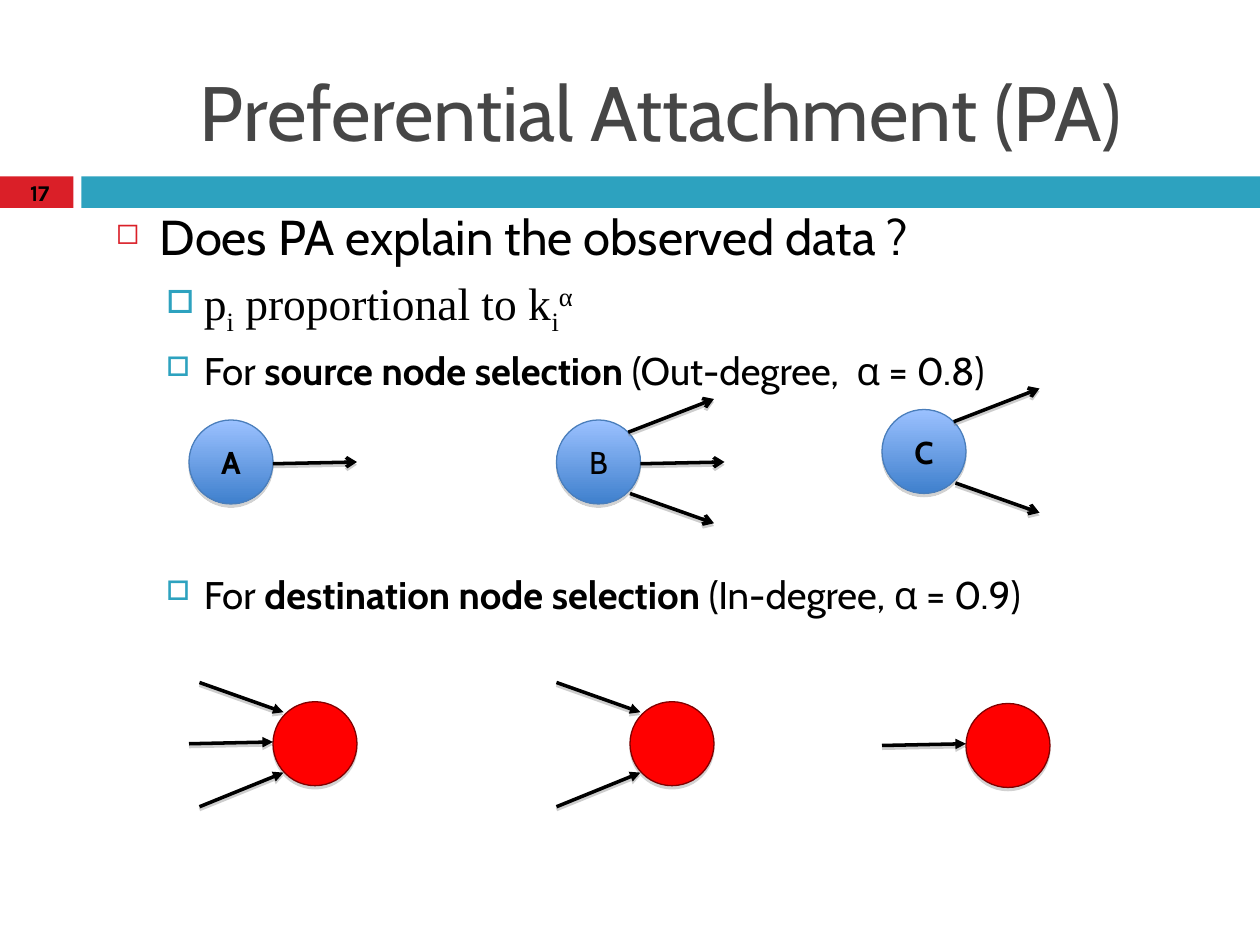
import pptx
import pptx.util
import pptx.dml.color
import pptx.enum.shapes
import pptx.enum.text
import pptx.oxml
import pptx.oxml.ns
from lxml import etree

Pt = pptx.util.Pt
RGBColor = pptx.dml.color.RGBColor
qn = pptx.oxml.ns.qn
SHAPE = pptx.enum.shapes.MSO_SHAPE
ALIGN = pptx.enum.text.PP_ALIGN
ANCHOR = pptx.enum.text.MSO_ANCHOR

BLACK = RGBColor(0x00, 0x00, 0x00)
TITLE_GRAY = RGBColor(0x46, 0x46, 0x46)
BAR_RED = RGBColor(0xDA, 0x1F, 0x28)
BAR_TEAL = RGBColor(0x2D, 0xA2, 0xBF)
SOURCE_LIGHT = RGBColor(0x9B, 0xC1, 0xFF)
SOURCE_DARK = RGBColor(0x3F, 0x80, 0xCD)
SOURCE_EDGE = RGBColor(0x4A, 0x7E, 0xBB)
DESTINATION_RED = RGBColor(0xFF, 0x00, 0x00)
DESTINATION_EDGE = RGBColor(0x80, 0x00, 0x00)
SHADOW_GRAY = RGBColor(0x80, 0x80, 0x80)

NODE_SIZE = 48
OUT_UP = ((41, 7), (90, -12))
OUT_LEVEL = ((48, 25), (96, 24))
OUT_DOWN = ((42, 42), (90, 59))
IN_ABOVE = ((-42, -11), (6, 6))
IN_LEVEL = ((-48, 24), (0, 23))
IN_BELOW = ((-42, 60), (6, 40.5))

SOURCES = [
    ("C", True, 504, 234, [OUT_UP, OUT_DOWN]),
    ("A", True, 108, 240, [OUT_LEVEL]),
    ("B", False, 318, 240, [OUT_UP, OUT_LEVEL, OUT_DOWN]),
]
DESTINATIONS = [
    (156, 401, [IN_BELOW, IN_LEVEL, IN_ABOVE]),
    (360, 401, [IN_BELOW, IN_ABOVE]),
    (552, 402, [IN_LEVEL]),
]


def add_run(paragraph, text, size=22, font="Cabin", color=BLACK, bold=False, baseline=0):
    run = paragraph.add_run()
    run.text = text
    run.font.size = Pt(size)
    run.font.name = font
    run.font.color.rgb = color
    run.font.bold = bold
    if baseline:
        run.font._element.set("baseline", str(baseline * 1000))


def set_bullet(paragraph, symbol, color, percent, left, hanging):
    properties = paragraph._p.get_or_add_pPr()
    properties.set("marL", str(Pt(left)))
    properties.set("indent", str(-Pt(hanging)))
    bullet_color = etree.SubElement(properties, qn("a:buClr"))
    etree.SubElement(bullet_color, qn("a:srgbClr"), val=str(color))
    etree.SubElement(properties, qn("a:buSzPct"), val=str(percent * 1000))
    etree.SubElement(properties, qn("a:buChar"), char=symbol)


def set_shadow(element, distance, opacity):
    effects = element.spPr.find(qn("a:effectLst"))
    if effects is None:
        effects = etree.SubElement(element.spPr, qn("a:effectLst"))
    shadow = etree.SubElement(effects, qn("a:outerShdw"), blurRad="0",
                              dist=str(Pt(distance)), dir="5400000", rotWithShape="0")
    color = etree.SubElement(shadow, qn("a:srgbClr"), val=str(SHADOW_GRAY))
    etree.SubElement(color, qn("a:alpha"), val=str(opacity * 1000))


def add_bar(slide, left, width, color):
    bar = slide.shapes.add_shape(SHAPE.RECTANGLE, Pt(left), Pt(100.8), Pt(width), Pt(18))
    bar.shadow.inherit = False
    bar.fill.solid()
    bar.fill.fore_color.rgb = color
    bar.line.fill.background()


def add_node(group, left, top, colors, edge):
    node = group.shapes.add_shape(SHAPE.OVAL, Pt(left), Pt(top), Pt(NODE_SIZE), Pt(NODE_SIZE))
    if len(colors) > 1:
        node.fill.gradient()
        node.fill.gradient_angle = 270
        for stop, position, color in zip(node.fill.gradient_stops, (0, 1), colors):
            stop.position = position
            stop.color.rgb = color
    else:
        node.fill.solid()
        node.fill.fore_color.rgb = colors[0]
    node.line.color.rgb = edge
    node.line.width = Pt(0.75)
    node.shadow.inherit = False
    set_shadow(node._element, 1.8, 35)
    return node


def add_arrows(group, left, top, routes, head):
    for (start_x, start_y), (end_x, end_y) in routes:
        arrow = group.shapes.add_connector(
            pptx.enum.shapes.MSO_CONNECTOR.STRAIGHT,
            Pt(left + start_x), Pt(top + start_y), Pt(left + end_x), Pt(top + end_y))
        arrow.line.color.rgb = BLACK
        arrow.line.width = Pt(2)
        etree.SubElement(arrow.line._get_or_add_ln(), qn("a:tailEnd"), type=head)
        set_shadow(arrow._element, 1.6, 38)


def add_title(slide):
    title = slide.shapes.title
    title.left, title.top, title.width, title.height = Pt(84), Pt(24), Pt(588), Pt(78)
    title.text_frame.vertical_anchor = ANCHOR.MIDDLE
    paragraph = title.text_frame.paragraphs[0]
    paragraph.alignment = ALIGN.CENTER
    add_run(paragraph, "Preferential Attachment (PA)", size=44, color=TITLE_GRAY)


def add_subpoint(frame, space_before=5.5):
    paragraph = frame.add_paragraph()
    paragraph.level = 1
    paragraph.space_before = Pt(space_before)
    set_bullet(paragraph, "□", BAR_TEAL, 70, 50.4, 21.6)
    return paragraph


def add_body(slide):
    body = slide.shapes.add_textbox(Pt(59), Pt(114.5), Pt(618.5), Pt(394))
    frame = body.text_frame
    frame.word_wrap = True

    question = frame.paragraphs[0]
    question.space_before = Pt(7)
    set_bullet(question, "◻", BAR_RED, 60, 25.2, 25.2)
    add_run(question, "Does PA explain the observed data ?", size=28)

    formula = add_subpoint(frame)
    for text, baseline in [("p", 0), ("i", -25), (" proportional to k", 0), ("i", -25), ("α", 30)]:
        add_run(formula, text, size=26, font="Times New Roman", baseline=baseline)

    for selection, result, space_before in [
        ("source node selection", " (Out-degree,  α = 0.8)", 5.5),
        ("destination node selection", " (In-degree, α = 0.9)", 101.5),
    ]:
        point = add_subpoint(frame, space_before)
        add_run(point, "For ")
        add_run(point, selection, bold=True)
        add_run(point, result)


def add_source(slide, label, bold, left, top, routes):
    group = slide.shapes.add_group_shape()
    node = add_node(group, left, top, (SOURCE_LIGHT, SOURCE_DARK), SOURCE_EDGE)
    node.text_frame.vertical_anchor = ANCHOR.MIDDLE
    paragraph = node.text_frame.paragraphs[0]
    paragraph.alignment = ALIGN.CENTER
    add_run(paragraph, label, size=18, bold=bold)
    add_arrows(group, left, top, routes, "arrow")


def add_destination(slide, left, top, routes):
    group = slide.shapes.add_group_shape()
    add_node(group, left, top, (DESTINATION_RED,), DESTINATION_EDGE)
    add_arrows(group, left, top, routes, "triangle")


def add_page_number(slide):
    number = slide.shapes.add_textbox(Pt(-0.7), Pt(99.4), Pt(46.8), Pt(20.9))
    number.text_frame.word_wrap = True
    number.text_frame.vertical_anchor = ANCHOR.MIDDLE
    paragraph = number.text_frame.paragraphs[0]
    paragraph.alignment = ALIGN.CENTER
    add_run(paragraph, "17", size=12.9, font="Karla", bold=True)


def main():
    deck = pptx.Presentation()
    deck.slide_width, deck.slide_height = Pt(720), Pt(540)
    slide = deck.slides.add_slide(deck.slide_layouts[5])
    add_bar(slide, 0, 42, BAR_RED)
    add_bar(slide, 46.5, 673.5, BAR_TEAL)
    add_title(slide)
    add_body(slide)
    for source in SOURCES:
        add_source(slide, *source)
    for destination in DESTINATIONS:
        add_destination(slide, *destination)
    add_page_number(slide)
    deck.save("out.pptx")


if __name__ == "__main__":
    main()
